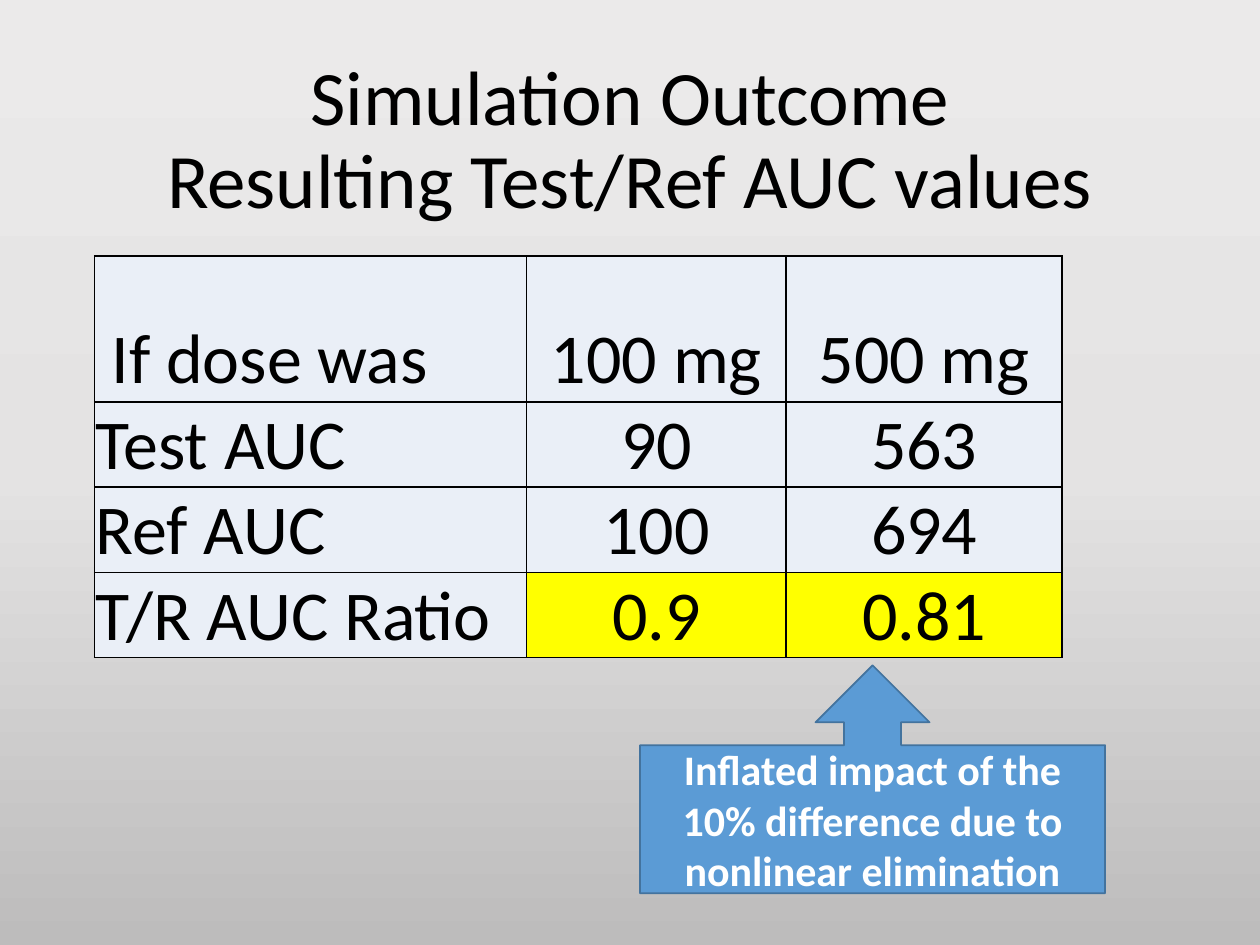
from copy import deepcopy

from lxml import etree
from pptx import Presentation
from pptx.dml.color import RGBColor
from pptx.enum import shapes, text
from pptx.oxml import ns
from pptx.util import Inches, Pt

BLACK = RGBColor(0x00, 0x00, 0x00)
WHITE = RGBColor(0xFF, 0xFF, 0xFF)
PALE_BLUE = RGBColor(0xEA, 0xEF, 0xF7)
YELLOW = RGBColor(0xFF, 0xFF, 0x00)
BLUE = RGBColor(0x5B, 0x9B, 0xD5)
DARK_BLUE = RGBColor(0x43, 0x73, 0x9E)
BACKGROUND_STOPS = [
    (0, RGBColor(0xEB, 0xEA, 0xEA)),
    (0.5, RGBColor(0xE4, 0xE3, 0xE3)),
    (1, RGBColor(0xBD, 0xBC, 0xBC)),
]

COLUMN_WIDTHS = [3.43, 2.06, 2.19]
ROW_HEIGHTS = [1.16, 0.64, 0.64, 0.64]
ROWS = [
    [" If dose was", "100 mg", "500 mg"],
    ["Test AUC", "90", "563"],
    ["Ref AUC", "100", "694"],
    ["T/R AUC Ratio", "0.9", "0.81"],
]


def write_text(frame, content, size, color=BLACK, bold=False,
               align=text.PP_ALIGN.CENTER, line_spacing=None):
    paragraph = frame.paragraphs[0]
    paragraph.text = content
    paragraph.alignment = align
    paragraph.line_spacing = line_spacing
    for run in paragraph.runs:
        run.font.name = "Calibri"
        run.font.size = Pt(size)
        run.font.bold = bold
        run.font.color.rgb = color


def paint_background(slide):
    fill = slide.background.fill
    fill.gradient()
    fill.gradient_angle = 270
    stop_list = slide.element.find(".//" + ns.qn("a:gsLst"))
    stop_list.insert(1, deepcopy(stop_list[0]))
    for stop, (position, color) in zip(fill.gradient_stops, BACKGROUND_STOPS):
        stop.position = position
        stop.color.rgb = color


def add_title(slide):
    box = slide.shapes.add_textbox(Inches(0.69), Inches(0.4), Inches(8.62), Inches(1.45))
    frame = box.text_frame
    frame.word_wrap = True
    frame.vertical_anchor = text.MSO_ANCHOR.MIDDLE
    write_text(frame, "Simulation Outcome\vResulting Test/Ref AUC values", 44,
               line_spacing=0.9)


def add_borders(cell):
    properties = cell._tc.get_or_add_tcPr()
    for index, side in enumerate(("lnL", "lnR", "lnT", "lnB")):
        line = etree.Element(ns.qn(f"a:{side}"), w=str(Pt(1)))
        fill = etree.SubElement(line, ns.qn("a:solidFill"))
        etree.SubElement(fill, ns.qn("a:srgbClr"), val=str(BLACK))
        properties.insert(index, line)


def format_cell(cell, content, fill_color, align):
    cell.margin_left = cell.margin_right = cell.margin_top = Inches(0.01)
    cell.margin_bottom = 0
    cell.vertical_anchor = text.MSO_ANCHOR.BOTTOM
    cell.fill.solid()
    cell.fill.fore_color.rgb = fill_color
    add_borders(cell)
    write_text(cell.text_frame, content, 40, align=align)


def add_auc_table(slide):
    table = slide.shapes.add_table(
        len(ROWS), len(COLUMN_WIDTHS), Inches(0.75), Inches(2.03),
        Inches(sum(COLUMN_WIDTHS)), Inches(sum(ROW_HEIGHTS))).table
    table.first_row = table.horz_banding = False
    for column, width in zip(table.columns, COLUMN_WIDTHS):
        column.width = Inches(width)
    for row, height in zip(table.rows, ROW_HEIGHTS):
        row.height = Inches(height)
    for row_index, values in enumerate(ROWS):
        for column_index, value in enumerate(values):
            is_label = column_index == 0
            is_ratio = row_index == len(ROWS) - 1 and not is_label
            format_cell(table.cell(row_index, column_index), value,
                        YELLOW if is_ratio else PALE_BLUE,
                        text.PP_ALIGN.LEFT if is_label else text.PP_ALIGN.CENTER)


def add_callout(slide):
    callout = slide.shapes.add_shape(
        shapes.MSO_SHAPE.UP_ARROW_CALLOUT,
        Inches(5.08), Inches(5.28), Inches(3.69), Inches(1.81))
    callout.shadow.inherit = False
    callout.fill.solid()
    callout.fill.fore_color.rgb = BLUE
    callout.line.color.rgb = DARK_BLUE
    callout.line.width = Pt(1)
    frame = callout.text_frame
    frame.word_wrap = True
    frame.vertical_anchor = text.MSO_ANCHOR.MIDDLE
    write_text(frame,
               "Inflated impact of the 10% difference due to nonlinear elimination",
               24, color=WHITE, bold=True)


def main():
    presentation = Presentation()
    presentation.slide_width = Inches(10)
    presentation.slide_height = Inches(7.5)
    slide = presentation.slides.add_slide(presentation.slide_layouts[6])
    paint_background(slide)
    add_title(slide)
    add_auc_table(slide)
    add_callout(slide)
    presentation.save("out.pptx")


if __name__ == "__main__":
    main()
